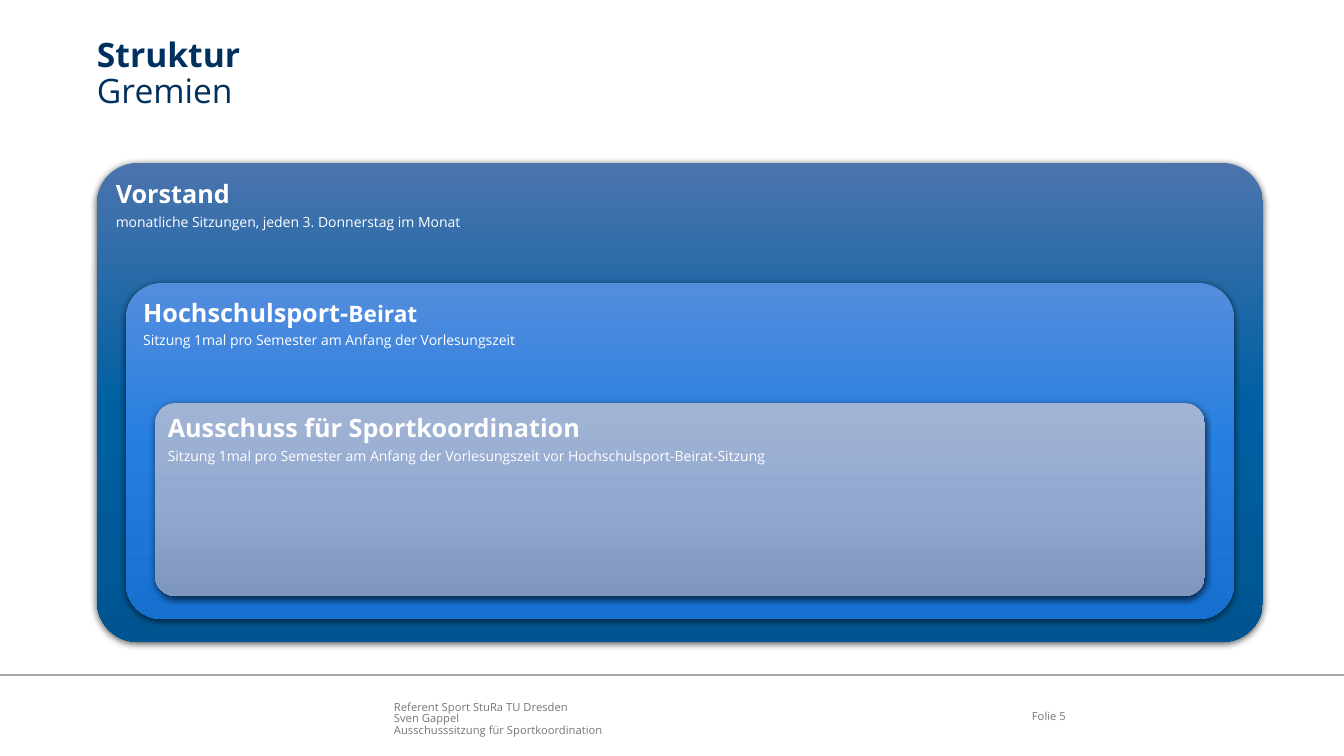
from lxml.etree import SubElement
from pptx import Presentation
from pptx.dml.color import RGBColor
from pptx.enum.shapes import MSO_CONNECTOR as Connector, MSO_SHAPE as Shape
from pptx.enum.text import MSO_ANCHOR as Anchor, MSO_AUTO_SIZE as AutoSize, PP_ALIGN as Align
from pptx.oxml.ns import qn
from pptx.util import Pt

PX = 914400 / 100.8
FONT = "Open Sans"
COLOURS = {"title": "00305E", "footer": "727879", "rule": "A6A6A6",
           "white": "FFFFFF", "shadow": "000000"}

# Outermost committee first: heading runs (text, size), meeting rhythm, corner, gradient
COMMITTEES = [
    ([("Vorstand", 18)], "monatliche Sitzungen, jeden 3. Donnerstag im Monat",
     0.085, ("4B74AD", "0060A2", "005590")),
    ([("Hochschulsport-", 18), ("Beirat", 16.2)],
     "Sitzung 1mal pro Semester am Anfang der Vorlesungszeit",
     0.105, ("548DDD", "237EE0", "1670D0")),
    ([("Ausschuss für Sportkoordination", 18)],
     "Sitzung 1mal pro Semester am Anfang der Vorlesungszeit vor Hochschulsport-Beirat-Sitzung",
     0.105, ("A2B4D4", "92AAD1", "7F96BD")),
]
FOOTER_LINES = ["Referent Sport StuRa TU Dresden", "Sven Gappel",
                "Ausschusssitzung für Sportkoordination"]


def px(*lengths):
    return [round(length * PX) for length in lengths]


def apply(target, **values):
    for name, value in values.items():
        setattr(target, name, value)


def add_run(paragraph, text, size, colour, bold=False):
    run = paragraph.add_run()
    run.text = text
    apply(run.font, name=FONT, size=Pt(size), bold=bold)
    run.font.color.rgb = RGBColor.from_string(COLOURS[colour])


def set_frame(frame, inset=0, anchor=Anchor.TOP):
    margin = px(inset)[0]
    apply(frame, word_wrap=True, auto_size=AutoSize.NONE, vertical_anchor=anchor,
          margin_left=margin, margin_right=margin, margin_top=margin, margin_bottom=margin)
    return frame


def add_title(slide, box):
    title = slide.shapes.title
    apply(title, **dict(zip(("left", "top", "width", "height"), px(*box))))
    heading = set_frame(title.text_frame).paragraphs[0]
    apply(heading, alignment=Align.LEFT, line_spacing=0.9)
    add_run(heading, "Struktur", 24, "title", bold=True)
    heading.add_line_break()
    add_run(heading, "Gremien", 24, "title")


def style_panel(panel, gradient):
    panel.fill.gradient()
    panel.fill.gradient_angle = 270
    panel.line.fill.background()
    panel.shadow.inherit = False
    properties = panel.element.spPr
    # Three evenly spaced gradient stops
    stops = properties.find(qn("a:gradFill")).find(qn("a:gsLst"))
    stops.clear()
    for index, colour in enumerate(gradient):
        stop = SubElement(stops, qn("a:gs"), pos=str(index * 50000))
        SubElement(stop, qn("a:srgbClr"), val=colour)
    # Soft shadow below the panel
    shadow = SubElement(properties.find(qn("a:effectLst")), qn("a:outerShdw"),
                        blurRad=str(Pt(4.5)), dist=str(Pt(1.5)), dir="5400000", rotWithShape="0")
    tint = SubElement(shadow, qn("a:srgbClr"), val=COLOURS["shadow"])
    SubElement(tint, qn("a:alpha"), val="63000")


def add_committee(slide, box, heading, meetings, corner, gradient):
    left, top, width, height = box
    panel = slide.shapes.add_shape(Shape.ROUNDED_RECTANGLE, *px(*box))
    panel.adjustments[0] = corner
    style_panel(panel, gradient)

    # Text area lies inside the rounded corners
    inset = 0.29 * corner * height
    label = slide.shapes.add_textbox(
        *px(left + inset, top + inset, width - 2 * inset, height - 2 * inset))
    frame = set_frame(label.text_frame, inset=7)
    name, rhythm = frame.paragraphs[0], frame.add_paragraph()
    for paragraph in (name, rhythm):
        apply(paragraph, line_spacing=0.9, space_after=Pt(4.6))
    for text, size in heading:
        add_run(name, text, size, "white", bold=True)
    add_run(rhythm, meetings, 10, "white")


def add_committees(slide, box):
    left, top, width, height = box
    for level, committee in enumerate(COMMITTEES):
        add_committee(slide, (left + 29 * level, top + 120 * level,
                              width - 58 * level, height - 143 * level), *committee)


def add_footer(slide, box):
    left, top, width, _ = box
    # Dividing line
    rule = slide.shapes.add_connector(Connector.STRAIGHT, *px(left, top, left + width, top))
    rule.line.color.rgb = RGBColor.from_string(COLOURS["rule"])
    rule.line.width = Pt(1)
    SubElement(rule.element.spPr, qn("a:effectLst"))

    # Speaker and occasion
    speaker = slide.shapes.add_textbox(*px(left + 394, top + 22, 572, 40))
    frame = set_frame(speaker.text_frame, anchor=Anchor.BOTTOM)
    for index, text in enumerate(FOOTER_LINES):
        paragraph = frame.add_paragraph() if index else frame.paragraphs[0]
        paragraph.line_spacing = 0.88
        add_run(paragraph, text, 8, "footer")

    # Slide number
    number = slide.shapes.add_textbox(*px(left + 989, top + 21, 77, 40))
    paragraph = set_frame(number.text_frame, anchor=Anchor.MIDDLE).paragraphs[0]
    paragraph.alignment = Align.RIGHT
    add_run(paragraph, "Folie 5", 8, "footer")


def main():
    deck = Presentation()
    deck.slide_width, deck.slide_height = px(1344, 756)
    slide = deck.slides.add_slide(deck.slide_layouts[5])
    add_footer(slide, (0, 675, 1344, 81))
    add_title(slide, (97, 38, 1166, 76))
    add_committees(slide, (97, 163, 1166, 479))
    deck.save("out.pptx")


if __name__ == "__main__":
    main()
